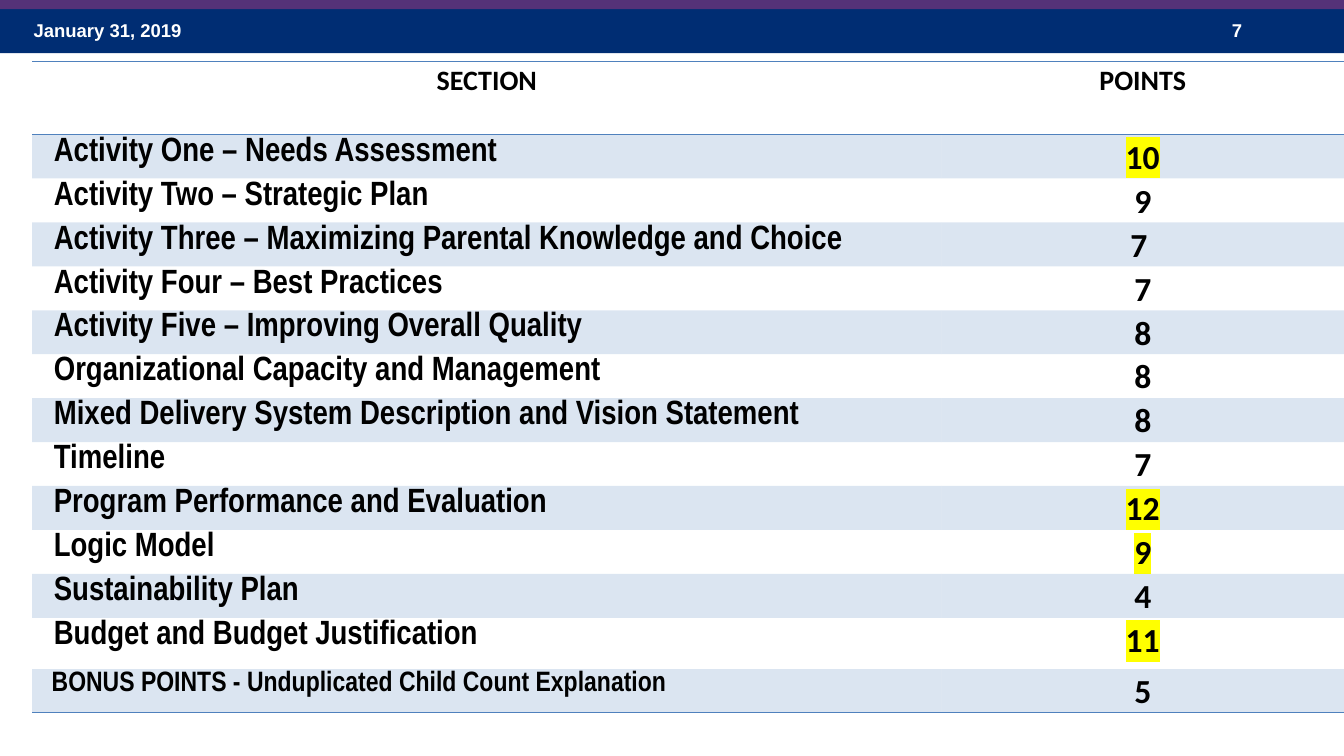
import dataclasses

import lxml.etree
import pptx
import pptx.dml.color
import pptx.enum.shapes
import pptx.enum.text
import pptx.oxml.ns
import pptx.util

Pt = pptx.util.Pt
qn = pptx.oxml.ns.qn
Align = pptx.enum.text.PP_ALIGN


@dataclasses.dataclass(frozen=True)
class Theme:
    navy: str = "002D73"
    purple: str = "553278"
    accent: str = "4F81BD"
    white: str = "FFFFFF"
    black: str = "000000"
    marker: str = "FFFF00"
    band_opacity: int = 20
    banner_font: str = "Arial"
    section_font: str = "Arial Narrow"
    points_font: str = "Calibri"
    banner_size: float = 13.2
    small_size: float = 20
    body_size: float = 24


THEME = Theme()
NO_TABLE_STYLE = "{2D5ABB26-0587-4C30-8999-92F81FD0307C}"

SECTIONS = [
    ("Activity One – Needs Assessment", "10", True),
    ("Activity Two – Strategic Plan", "9", False),
    ("Activity Three – Maximizing Parental Knowledge and Choice", "7 ", False),
    ("Activity Four – Best Practices", "7", False),
    ("Activity Five – Improving Overall Quality", "8", False),
    ("Organizational Capacity and Management", "8", False),
    ("Mixed Delivery System Description and Vision Statement", "8", False),
    ("Timeline", "7", False),
    ("Program Performance and Evaluation", "12", True),
    ("Logic Model", "9", True),
    ("Sustainability Plan", "4", False),
    ("Budget and Budget Justification", "11", True),
]
BONUS = ("BONUS POINTS - Unduplicated Child Count Explanation", "5", False)


def rgb(code):
    return pptx.dml.color.RGBColor.from_string(code)


def write(frame, text, font, size, color, align=Align.LEFT):
    frame.text = text
    para = frame.paragraphs[0]
    para.alignment = align
    span = para.runs[0]
    span.font.name = font
    span.font.size = Pt(size)
    span.font.bold = True
    span.font.color.rgb = rgb(color)
    return para


def highlight(span, color):
    marker = lxml.etree.Element(qn("a:highlight"))
    lxml.etree.SubElement(marker, qn("a:srgbClr"), val=color)
    span.font._rPr.find(qn("a:solidFill")).addnext(marker)


def add_bar(page, left, top, width, height, color):
    bar = page.shapes.add_shape(
        pptx.enum.shapes.MSO_SHAPE.RECTANGLE, Pt(left), Pt(top), Pt(width), Pt(height))
    bar.shadow.inherit = False
    bar.fill.solid()
    bar.fill.fore_color.rgb = rgb(color)
    bar.line.fill.background()


def add_banner(page, left, top, width, height):
    stripe = 6.5
    add_bar(page, left, top + stripe, width, height - stripe, THEME.navy)
    for text, offset, extent in (("January 31, 2019", 16, 224), ("7", 872, 72)):
        box = page.shapes.add_textbox(
            Pt(left + offset), Pt(top + 9.4), Pt(extent), Pt(28.8))
        frame = box.text_frame
        frame.word_wrap = True
        frame.margin_left = frame.margin_right = Pt(8)
        frame.margin_top = frame.margin_bottom = Pt(4)
        write(frame, text, THEME.banner_font, THEME.banner_size, THEME.white)
    add_bar(page, left, top, width, stripe, THEME.purple)


def format_cell(cell, edges, banded):
    properties = cell._tc.get_or_add_tcPr()
    for edge in edges:
        line = lxml.etree.SubElement(properties, qn(f"a:{edge}"), w=str(Pt(1)))
        fill = lxml.etree.SubElement(line, qn("a:solidFill"))
        lxml.etree.SubElement(fill, qn("a:srgbClr"), val=THEME.accent)
    if banded:
        cell.fill.solid()
        cell.fill.fore_color.rgb = rgb(THEME.accent)
        color = properties.find(qn("a:solidFill")).find(qn("a:srgbClr"))
        lxml.etree.SubElement(color, qn("a:alpha"), val=str(THEME.band_opacity * 1000))
    else:
        cell.fill.background()
    cell.margin_top = cell.margin_bottom = 0


def fill_cell(cell, text, font, size, align, inset=5):
    cell.margin_left = Pt(inset)
    cell.margin_right = Pt(5)
    para = write(cell.text_frame, text, font, size, THEME.black, align)
    para.line_spacing = 1.07
    return para


def add_score_table(page, left, top, width, height):
    entries = SECTIONS + [BONUS]
    header_height, budget_height, row_height = 52.2, 36.6, 31.4
    heights = [header_height] + [row_height] * (len(SECTIONS) - 1)
    heights += [budget_height, height - sum(heights) - budget_height]
    holder = page.shapes.add_table(
        len(heights), 2, Pt(left), Pt(top), Pt(width), Pt(height))
    table = holder.table
    table.first_row = table.horz_banding = False
    next(holder._element.iter(qn("a:tableStyleId"))).text = NO_TABLE_STYLE
    section_width = 649.6
    table.columns[0].width = Pt(section_width)
    table.columns[1].width = Pt(width - section_width)

    for number, row_extent in enumerate(heights):
        table.rows[number].height = Pt(row_extent)
        edges = {0: ("lnT", "lnB"), len(entries): ("lnB",)}.get(number, ())
        for column in range(2):
            format_cell(table.cell(number, column), edges, number % 2 == 1)

    for column, heading in enumerate(("SECTION", "POINTS")):
        fill_cell(table.cell(0, column), heading, THEME.points_font,
                  THEME.small_size, Align.CENTER)

    for number, (section, points, marked) in enumerate(entries, start=1):
        bonus = number == len(entries)
        fill_cell(table.cell(number, 0), section, THEME.section_font,
                  THEME.small_size if bonus else THEME.body_size,
                  Align.LEFT, 14 if bonus else 15.5)
        para = fill_cell(table.cell(number, 1), points, THEME.points_font,
                         THEME.body_size, Align.CENTER)
        if marked:
            highlight(para.runs[0], THEME.marker)


def main():
    deck = pptx.Presentation()
    deck.slide_width, deck.slide_height = Pt(960), Pt(540)
    page = deck.slides.add_slide(deck.slide_layouts[6])
    add_banner(page, 0, 0, 960, 38)
    add_score_table(page, 23, 43.9, 937, 465.4)
    deck.save("out.pptx")


if __name__ == "__main__":
    main()
